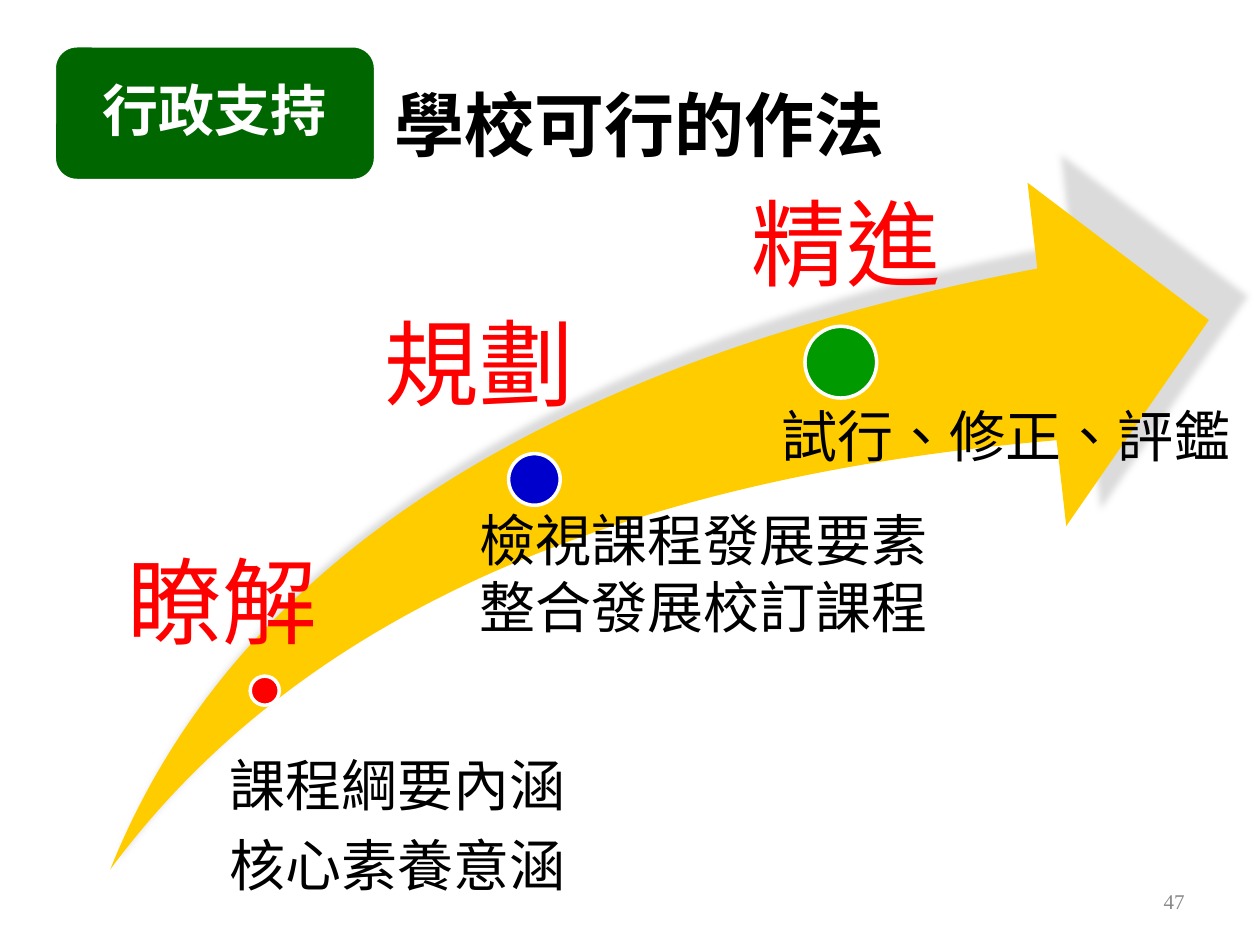
"""Build the slide on what a school can do, from understanding to refinement."""
from lxml.etree import SubElement
from pptx import Presentation
from pptx.dml.color import RGBColor
from pptx.enum.lang import MSO_LANGUAGE_ID as Language
from pptx.enum.shapes import MSO_SHAPE as Shape
from pptx.enum.text import MSO_ANCHOR as Anchor, MSO_AUTO_SIZE as AutoSize, PP_ALIGN as Align
from pptx.oxml.ns import qn
from pptx.util import Pt

BLACK = RGBColor(0x00, 0x00, 0x00)
WHITE = RGBColor(0xFF, 0xFF, 0xFF)
RED = RGBColor(0xFF, 0x00, 0x00)
BLUE = RGBColor(0x00, 0x00, 0xCC)
GREEN = RGBColor(0x00, 0x99, 0x00)
DARK_GREEN = RGBColor(0x00, 0x66, 0x00)
GOLD = RGBColor(0xFF, 0xCC, 0x00)
GREY = RGBColor(0x89, 0x89, 0x89)
SANS, SERIF = "Noto Sans CJK SC", "Times New Roman"

TITLE = "學校可行的作法"
BADGE = "行政支持"
PAGE_NUMBER = "47"
STAGES = [
    {"label": "精進", "label_at": (382.3, 105.8, 186.5, 73.4),
     "dot": (460, 186.5, 41), "color": GREEN,
     "details": ["試行、修正、評鑑"], "details_at": (416.9, 229.7, 294.5, 272.9),
     "inset": 21.6, "after": 0, "spacing": [None]},
    {"label": "規劃", "label_at": (172.8, 174.2, 186.5, 73.4),
     "dot": (290.6, 259.2, 29.5), "color": BLUE,
     "details": ["檢視課程發展要素", "整合發展校訂課程"], "details_at": (254.6, 288.7, 279.4, 213.8),
     "inset": 15.8, "after": 0, "spacing": [None, None]},
    {"label": "瞭解", "label_at": (54, 310.3, 130.3, 73.4),
     "dot": (143, 386.4, 16.6), "color": RED,
     "details": ["課程綱要內涵", "核心素養意涵"], "details_at": (118.8, 428.7, 208.1, 111.3),
     "inset": 8.6, "after": 11.8, "spacing": [None, 0.9]},
]


def write(shape, lines, size, color, insets, align=Align.CENTER, anchor=Anchor.TOP,
          bold=False, name=SANS, after=0, spacing=(None,), wrap=True):
    frame = shape.text_frame
    frame.auto_size = AutoSize.NONE
    frame.word_wrap = wrap
    frame.vertical_anchor = anchor
    (frame.margin_left, frame.margin_top,
     frame.margin_right, frame.margin_bottom) = map(Pt, insets)
    frame.text = "\n".join(lines)
    for paragraph, line_spacing in zip(frame.paragraphs, spacing):
        paragraph.alignment = align
        paragraph.line_spacing = line_spacing
        paragraph.space_after = Pt(after)
        font = paragraph.font
        font.size, font.bold, font.name = Pt(size), bold, name
        font.color.rgb = color
        properties = paragraph._p.pPr.find(qn("a:defRPr"))
        SubElement(properties, qn("a:ea"), typeface=name)
        for span in paragraph.runs:
            span.font.language_id = Language.TRADITIONAL_CHINESE


def add_panel(page, bounds, *args, **options):
    left, top, width, height = map(Pt, bounds)
    right, bottom = left + width, top + height
    builder = page.shapes.build_freeform(left, top)
    builder.add_line_segments([(right, top), (right, bottom), (left, bottom)])
    panel = builder.convert_to_shape()
    panel.shadow.inherit = False
    panel.fill.background()
    panel.line.fill.background()
    write(panel, *args, **options)


def add_filled(page, kind, bounds, color, outlined=True):
    shape = page.shapes.add_shape(kind, *map(Pt, bounds))
    shape.shadow.inherit = False
    shape.fill.solid()
    shape.fill.fore_color.rgb = color
    if outlined:
        shape.line.color.rgb = WHITE
        shape.line.width = Pt(2)
    else:
        shape.line.fill.background()
    return shape


def add_shadow(shape):
    effects = shape._element.spPr.find(qn("a:effectLst"))
    shadow = SubElement(effects, qn("a:outerShdw"), blurRad=str(Pt(4)), dist=str(Pt(5)),
                        dir="18900000", sx="103000", sy="103000", algn="bl", rotWithShape="0")
    tint = SubElement(shadow, qn("a:srgbClr"), val="A6A6A6")
    SubElement(tint, qn("a:alpha"), val="40000")


def main():
    deck = Presentation()
    deck.slide_width, deck.slide_height = Pt(720), Pt(540)
    page = deck.slides.add_slide(deck.slide_layouts[5])

    title = page.shapes.title
    title.left, title.top, title.width, title.height = map(Pt, (218.2, 43.2, 297.4, 55.4))
    write(title, [TITLE], 40, BLACK, (7.2, 3.6, 7.2, 3.6), Align.LEFT, bold=True, wrap=False)

    arrow = add_filled(page, Shape.SWOOSH_ARROW, (63, 104.4, 627.8, 392.4), GOLD, outlined=False)
    arrow.adjustments[0] = arrow.adjustments[1] = 0.25
    add_shadow(arrow)

    for stage in STAGES:
        left, top, diameter = stage["dot"]
        add_filled(page, Shape.OVAL, (left, top, diameter, diameter), stage["color"])
        add_panel(page, stage["details_at"], stage["details"], 32, BLACK,
                  (stage["inset"], 0, 0, 0), after=stage["after"], spacing=stage["spacing"])
        add_panel(page, stage["label_at"], [stage["label"]], 54, RED, (15.8, 0, 0, 0))

    badge = add_filled(page, Shape.ROUNDED_RECTANGLE, (31, 26.2, 183.6, 77), DARK_GREEN)
    write(badge, [BADGE], 32, WHITE, (13.7, 13.7, 13.7, 13.7), anchor=Anchor.MIDDLE,
          bold=True, after=11.2, spacing=[0.9])

    number = page.shapes.add_textbox(*map(Pt, (516.2, 500.4, 167.8, 28.8)))
    write(number, [PAGE_NUMBER], 12, GREY, (7.2, 3.6, 7.2, 3.6), Align.RIGHT,
          Anchor.MIDDLE, name=SERIF)
    deck.save("out.pptx")


if __name__ == "__main__":
    main()
